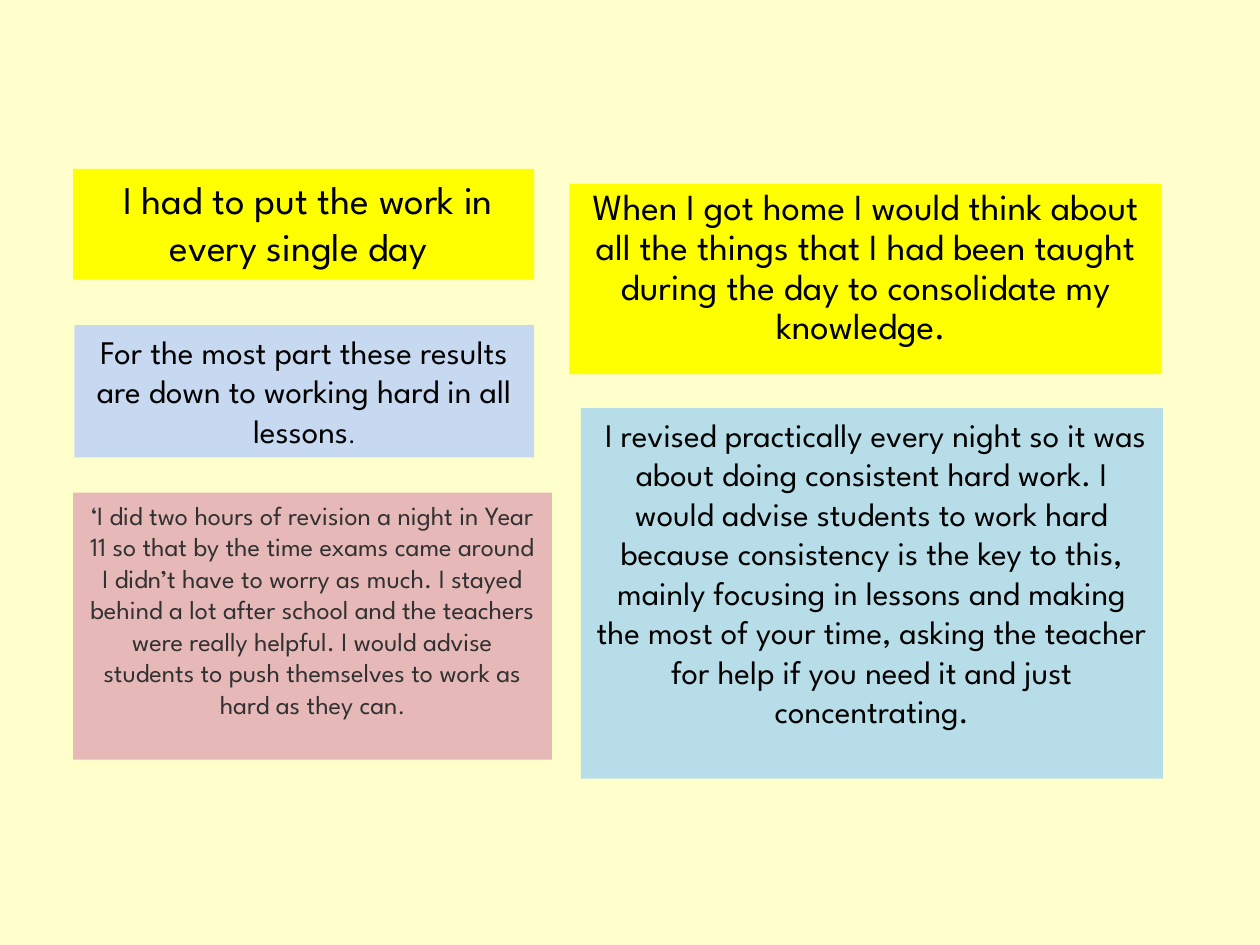
"""Build a slide of five student quotes about hard work and revision."""
from dataclasses import dataclass

from pptx import Presentation
from pptx.dml.color import RGBColor
from pptx.enum.text import MSO_ANCHOR as Anchor, PP_ALIGN as Align
from pptx.slide import Slide
from pptx.util import Inches, Pt

FONT = "League Spartan"
CREAM = RGBColor(0xFF, 0xFF, 0xCC)
YELLOW = RGBColor(0xFF, 0xFF, 0x00)
AQUA = RGBColor(0xB7, 0xDE, 0xE8)
PINK = RGBColor(0xE6, 0xB9, 0xB8)
PALE_BLUE = RGBColor(0xC6, 0xD9, 0xF1)
BLACK = RGBColor(0x00, 0x00, 0x00)
CHARCOAL = RGBColor(0x31, 0x31, 0x31)


@dataclass(frozen=True)
class Quote:
    left: float
    top: float
    width: float
    height: float
    fill: RGBColor
    runs: tuple[tuple[str, float], ...]
    color: RGBColor = BLACK
    line_spacing: float = 1.0
    side_inset: float = 0.1
    edge_inset: float = 0.05


QUOTES = (
    Quote(0.58, 1.34, 3.66, 0.88, YELLOW,
          ((" I had to put the work in every single day ", 22.4),)),
    Quote(4.52, 1.46, 4.7, 1.51, YELLOW,
          (("When I got home I would think about all the things that I had been "
            "taught during the day to consolidate my knowledge. ", 21),),
          line_spacing=0.9, side_inset=0.07, edge_inset=0.04),
    Quote(4.61, 3.24, 4.62, 2.94, AQUA,
          ((" I revised practically every night so it was about doing consistent "
            "hard work. I would advise students to work hard because consistency is "
            "the key to this, mainly focusing in lessons and making the most of your "
            "time, asking the teacher for help if you need it and just "
            "concentrating.", 18.8),)),
    Quote(0.58, 3.91, 3.8, 2.12, PINK,
          (("‘I did two hours of revision a night in Year 11 so that by the time "
            "exams came around I didn’t have to worry as much. I stayed behind a lot "
            "after school and the teachers were really helpful. I would advise "
            "students to push themselves to work as hard as they can", 15),
           (".", 13.5)),
          color=CHARCOAL),
    Quote(0.59, 2.58, 3.65, 1.05, PALE_BLUE,
          (("For the most part these results are down to working hard in all "
            "lessons", 18.8),
           (".", 13.5))),
)


def add_quote(slide: Slide, quote: Quote) -> None:
    """Draw one filled box with its centred quote."""
    box = slide.shapes.add_textbox(Inches(quote.left), Inches(quote.top),
                                   Inches(quote.width), Inches(quote.height))
    box.fill.solid()
    box.fill.fore_color.rgb = quote.fill
    frame = box.text_frame
    frame.word_wrap = True
    frame.vertical_anchor = Anchor.TOP
    frame.margin_left = frame.margin_right = Inches(quote.side_inset)
    frame.margin_top = frame.margin_bottom = Inches(quote.edge_inset)
    paragraph = frame.paragraphs[0]
    paragraph.alignment = Align.CENTER
    paragraph.line_spacing = quote.line_spacing
    for words, size in quote.runs:
        run = paragraph.add_run()
        run.text = words
        run.font.name = FONT
        run.font.size = Pt(size)
        run.font.color.rgb = quote.color


def main() -> None:
    """Create and save the presentation."""
    deck = Presentation()
    deck.slide_width, deck.slide_height = Inches(10), Inches(7.5)
    slide = deck.slides.add_slide(deck.slide_layouts[6])
    slide.background.fill.solid()
    slide.background.fill.fore_color.rgb = CREAM
    for quote in QUOTES:
        add_quote(slide, quote)
    deck.save("out.pptx")


if __name__ == "__main__":
    main()
